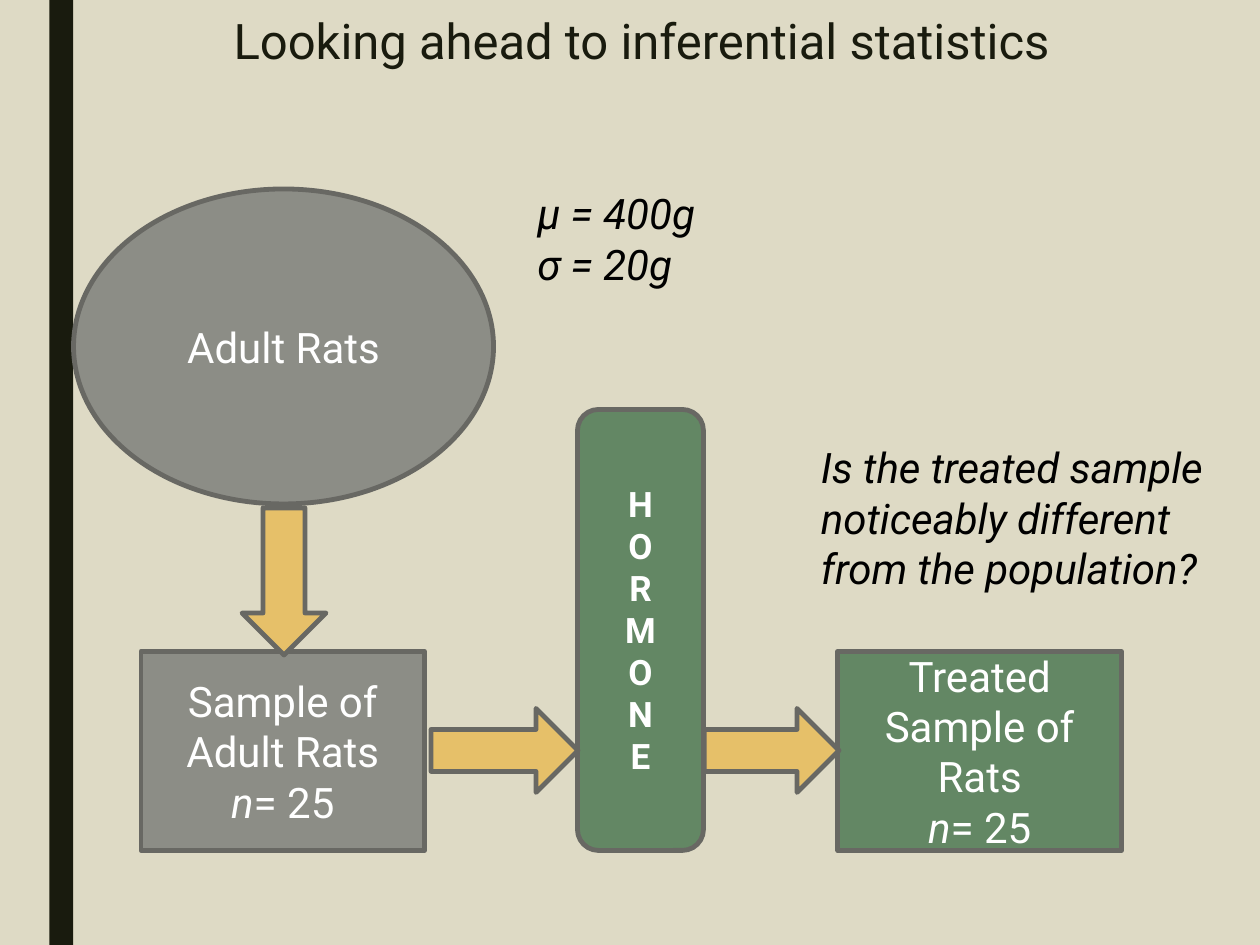
import pptx
import pptx.util
import pptx.dml.color
import pptx.enum.shapes
import pptx.enum.text

Pt = pptx.util.Pt
KIND = pptx.enum.shapes.MSO_SHAPE
ALIGN = pptx.enum.text.PP_ALIGN
ANCHOR = pptx.enum.text.MSO_ANCHOR

# Content: a paragraph is a list of (text, italic) runs
TITLE = "Looking ahead to inferential statistics"
COUNT = [("n", True), ("= 25", False)]
HUES = {"back": "DEDAC5", "dark": "191B0E", "gray": "8C8D86", "green": "638764",
        "gold": "E6C069", "edge": "686863", "white": "FFFFFF", "black": "000000"}

LARGE = {"size": Pt(24), "name": "Roboto"}
BOLD = {"size": Pt(20), "name": "Roboto", "bold": True}

# Boxes: kind, (left, top, width, height), fill, format, paragraphs
BOXES = [
    (KIND.OVAL, (42, 108, 240, 180), "gray", LARGE, [[("Adult Rats", False)]]),
    (KIND.RECTANGLE, (80.6, 372.2, 162, 113.8), "gray", LARGE,
     [[("Sample of Adult Rats", False)], COUNT]),
    (KIND.ROUNDED_RECTANGLE, (330, 234, 72, 252), "green", BOLD,
     [[(char, False)] for char in "HORMONE"]),
    (KIND.RECTANGLE, (478.8, 372.2, 162, 113.8), "green", LARGE,
     [[("Treated Sample of Rats", False)], COUNT]),
]
# Notes: frame, paragraphs
NOTES = [
    ((300, 103.8, 234, 65.4), [[("μ = 400g", True)], [("σ = 20g", True)]]),
    ((462, 249, 234, 94.5),
     [[("Is the treated sample noticeably different from the population?", True)]]),
]
# Arrows: centre x, centre y, length, turn
ARROWS = [(162.3, 332.3, 84, 0), (288.3, 428.8, 84, 270), (441, 428.8, 77, 270)]
BREADTH = 48


def hue(name):
    return pptx.dml.color.RGBColor.from_string(HUES[name])


def style(font, form, color):
    for key, value in form.items():
        setattr(font, key, value)
    font.color.rgb = hue(color)


def write(frame, paras, form, color, align):
    frame.word_wrap = True
    for i, runs in enumerate(paras):
        para = frame.paragraphs[0] if i == 0 else frame.add_paragraph()
        para.alignment = align
        for text, slant in runs:
            run = para.add_run()
            run.text = text
            style(run.font, {**form, "italic": slant}, color)


def draw(slide, kind, frame, fill, line=True):
    shape = slide.shapes.add_shape(kind, *map(Pt, frame))
    shape.shadow.inherit = False
    shape.fill.solid()
    shape.fill.fore_color.rgb = hue(fill)
    if line:
        shape.line.color.rgb = hue("edge")
        shape.line.width = Pt(2.75)
    else:
        shape.line.fill.background()
    return shape


def main():
    deck = pptx.Presentation()
    deck.slide_width, deck.slide_height = Pt(720), Pt(540)
    slide = deck.slides.add_slide(deck.slide_layouts[5])
    slide.background.fill.solid()
    slide.background.fill.fore_color.rgb = hue("back")

    # Side band
    draw(slide, KIND.RECTANGLE, (28.2, 0, 13.6, 540), "dark", line=False)

    # Title
    title = slide.shapes.title
    place = {"left": 82.8, "top": 6.5, "width": 567.4, "height": 49.7}
    for key, value in place.items():
        setattr(title, key, Pt(value))
    title.text_frame.vertical_anchor = ANCHOR.TOP
    write(title.text_frame, [[(TITLE, False)]], {"size": Pt(28), "name": "Roboto"},
          "dark", ALIGN.CENTER)
    title.text_frame.paragraphs[0].line_spacing = 0.89

    # Boxes
    for kind, frame, fill, form, paras in BOXES:
        box = draw(slide, kind, frame, fill)
        box.text_frame.vertical_anchor = ANCHOR.MIDDLE
        write(box.text_frame, paras, form, "white", ALIGN.CENTER)

    # Notes
    for frame, paras in NOTES:
        note = slide.shapes.add_textbox(*map(Pt, frame))
        write(note.text_frame, paras, LARGE, "black", ALIGN.LEFT)

    # Arrows
    for x, y, span, turn in ARROWS:
        frame = (x - BREADTH / 2, y - span / 2, BREADTH, span)
        draw(slide, KIND.DOWN_ARROW, frame, "gold").rotation = turn

    deck.save("out.pptx")


if __name__ == "__main__":
    main()
